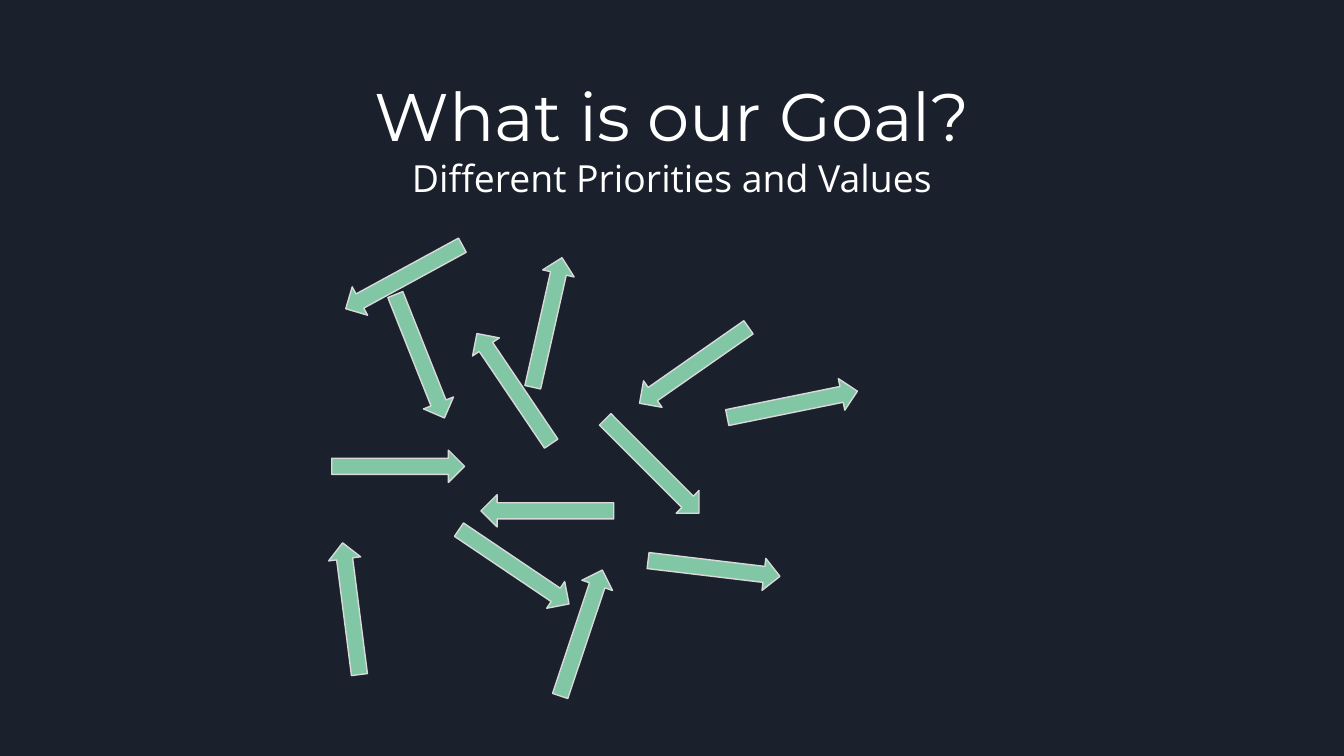
from pptx import Presentation
from pptx import util as u
from pptx.dml.color import RGBColor
from pptx.enum import shapes, text

COLORS = {"background": "1B212C", "text": "FFFFFF", "arrow": "82C7A5", "outline": "D9D9D9"}
C = {name: RGBColor.from_string(value) for name, value in COLORS.items()}

prs = Presentation()
prs.slide_width, prs.slide_height = u.Cm(25.4), u.Cm(14.29)
s = prs.slides.add_slide(prs.slide_layouts[6])
s.background.fill.solid()
s.background.fill.fore_color.rgb = C["background"]

# Heading
tf = s.shapes.add_textbox(u.Cm(5), u.Cm(0.51), u.Cm(15.4), u.Cm(4.17)).text_frame
tf.word_wrap = True
tf.vertical_anchor = text.MSO_ANCHOR.MIDDLE
tf.margin_left = tf.margin_right = tf.margin_top = tf.margin_bottom = u.Cm(0.25)
lines = [
    ("What is our Goal?", "Montserrat", 36),
    ("Different Priorities and Values", "Open Sans", 20),
]
for i, (line, font, size) in enumerate(lines):
    p = tf.add_paragraph() if i else tf.paragraphs[0]
    p.text = line
    p.alignment = text.PP_ALIGN.CENTER
    p.font.name = font
    p.font.size = u.Pt(size)
    p.font.color.rgb = C["text"]

# Scattered arrows: left and top in cm, rotation in degrees
arrows = [
    (6.68, 6.43, 68.3),
    (9.09, 5.79, 282.7),
    (6.27, 8.51, 0),
    (11.07, 8.51, 45),
    (8.46, 7.04, 236),
    (12.24, 10.44, 6.8),
    (9.09, 9.35, 180),
    (5.38, 11.2, 262.7),
    (8.46, 10.41, 34),
    (11.86, 6.6, 145.1),
    (13.72, 7.34, 348.5),
    (9.73, 11.66, 288.5),
    (6.38, 4.93, 151.4),
]
for left, top, angle in arrows:
    sp = s.shapes.add_shape(shapes.MSO_SHAPE.RIGHT_ARROW,
                            u.Cm(left), u.Cm(top), u.Cm(2.51), u.Cm(0.61))
    sp.rotation = angle
    sp.shadow.inherit = False
    sp.fill.solid()
    sp.fill.fore_color.rgb = C["arrow"]
    sp.line.color.rgb = C["outline"]
    sp.line.width = u.Pt(0.75)

prs.save("out.pptx")
